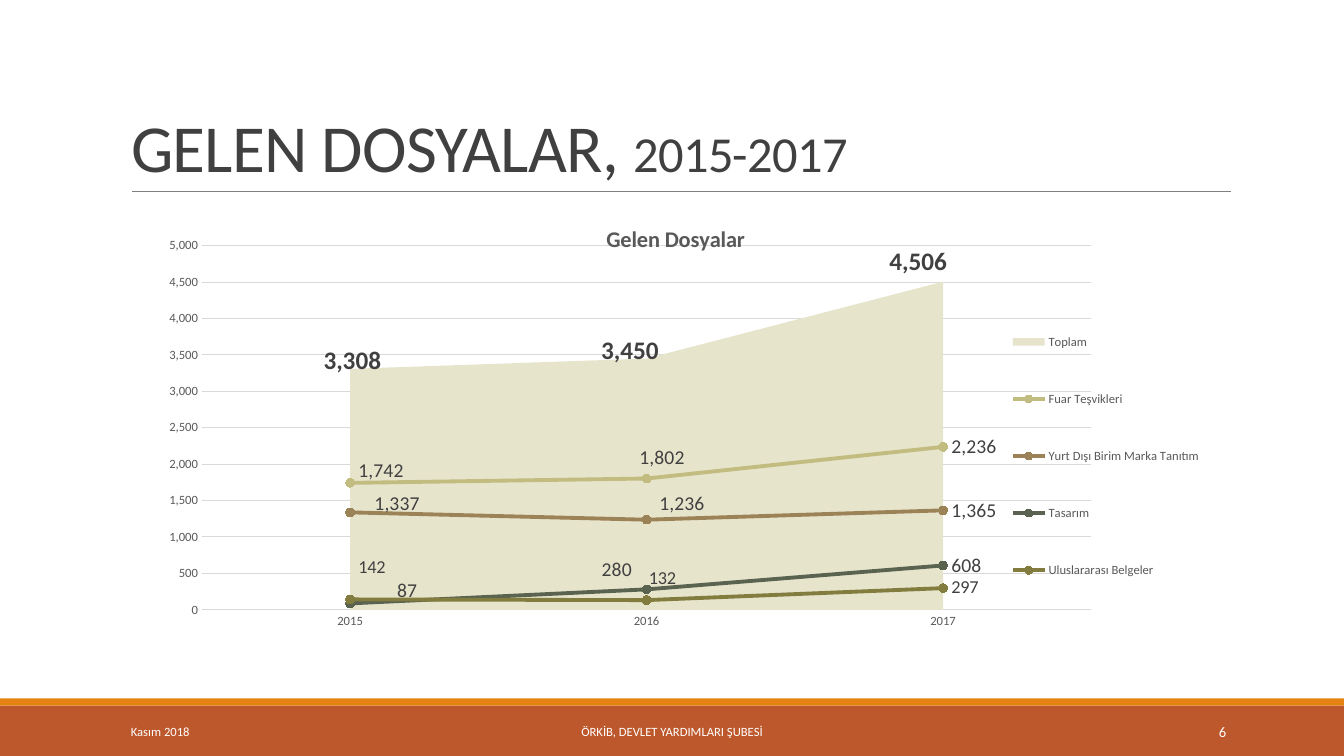
"""Build the slide on incoming files, 2015-2017, with a combined area and line chart."""
from lxml import etree
from pptx import Presentation
from pptx import util as u
from pptx.chart.data import CategoryChartData
from pptx.dml.color import RGBColor
from pptx.enum import chart as ch, shapes, text
from pptx.oxml import parse_xml
from pptx.oxml.ns import nsdecls, qn

W, H = 13.33, 7.5
LEFT, WIDTH = 1.2, 11
FONT, DARK, GREY, PALE, WHITE = "Calibri", "404040", "595959", "D9D9D9", "FFFFFF"
TITLE = [("GELEN DOSYALAR, ", 48), ("2015-2017", 36)]
BARS = [(7, 0.5, "BD582C"), (6.93, 0.07, "E48312")]
FOOTERS = [
    ("Kasım 2018", 1.2, 2.7, 9, text.PP_ALIGN.LEFT),
    ("ÖRKİB, DEVLET YARDIMLARI ŞUBESİ", 4.03, 5.27, 9, text.PP_ALIGN.CENTER),
    ("6", 10.83, 1.43, 10.5, text.PP_ALIGN.RIGHT),
]
YEARS = ["2015", "2016", "2017"]
# name, values, colour, marker colour, label size, label shifts as percent of chart
SERIES = [
    ("Toplam", (3308, 3450, 4506), "E7E4CC", None, 18, [(0.2, -28.7), (-1.5, -29.8), (-2.25, -41)]),
    ("Fuar Teşvikleri", (1742, 1802, 2236), "C2BC80", "C5BF7D", 14, [(0, -2.7), (-1.4, -4.7)]),
    ("Yurt Dışı Birim Marka Tanıtım", (1337, 1236, 1365), "9B8357", "9E8454", 14,
     [(1.45, -1.9), (0.4, -3.6)]),
    ("Tasarım", (87, 280, 608), "59634F", "59644E", 14, [(3.5, -2.9), (-4.8, -4.4)]),
    ("Uluslararası Belgeler", (142, 132, 297), "837C3F", "867F3B", 13, [(0, -7.1), (-0.55, -4.7)]),
]


def rgb(value):
    """Turn a hex string into a colour."""
    return RGBColor.from_string(value)


def style(font, size, color, bold=False):
    """Set the face, size, colour and weight of a font."""
    font.name, font.size, font.bold = FONT, u.Pt(size), bold
    font.color.rgb = rgb(color)


def layout(x, y, w=None, h=None, inner=False, edge=True):
    """Make a manual chart layout from shares of the chart's size."""
    parts = [("layoutTarget", "inner")] if inner else []
    parts += [("xMode", "edge"), ("yMode", "edge")] if edge else []
    parts += [("x", x), ("y", y)]
    parts += [("w", w), ("h", h)] if w else []
    body = "".join(f'<c:{tag} val="{val}"/>' for tag, val in parts)
    return parse_xml(f"<c:layout {nsdecls('c')}><c:manualLayout>{body}</c:manualLayout></c:layout>")


def place(parent, after, element):
    """Put a layout after a named child in place of any earlier layout."""
    for old in parent.findall(qn("c:layout")):
        parent.remove(old)
    if after is None:
        parent.insert(0, element)
    else:
        parent.find(qn(after)).addnext(element)


def add_frame(s):
    """Draw the bottom bars, the title rule and the footer texts."""
    for top, height, color in BARS:
        sp = s.shapes.add_shape(shapes.MSO_SHAPE.RECTANGLE, 0, u.Inches(top), u.Inches(W), u.Inches(height))
        sp.shadow.inherit = False
        sp.fill.solid()
        sp.fill.fore_color.rgb = rgb(color)
        sp.line.fill.background()
    rule = s.shapes.add_connector(shapes.MSO_CONNECTOR.STRAIGHT, u.Inches(1.31), u.Inches(1.9),
                                  u.Inches(12.21), u.Inches(1.9))
    rule.line.color.rgb, rule.line.width = rgb("808080"), u.Pt(0.5)
    etree.SubElement(rule._element.spPr, qn("a:effectLst"))
    for words, left, width, size, align in FOOTERS:
        tf = s.shapes.add_textbox(u.Inches(left), u.Inches(7.06), u.Inches(width), u.Inches(0.4)).text_frame
        tf.word_wrap, tf.vertical_anchor = True, text.MSO_ANCHOR.MIDDLE
        p = tf.paragraphs[0]
        p.text, p.alignment = words, align
        style(p.runs[0].font, size, WHITE)


def add_title(s):
    """Place and format the title."""
    sp = s.shapes.title
    sp.left, sp.top, sp.width, sp.height = (u.Inches(v) for v in (LEFT, 0.31, WIDTH, 1.59))
    tf = sp.text_frame
    tf.word_wrap, tf.auto_size = True, text.MSO_AUTO_SIZE.NONE
    tf.vertical_anchor = text.MSO_ANCHOR.BOTTOM
    p = tf.paragraphs[0]
    p.alignment, p.line_spacing = text.PP_ALIGN.LEFT, 0.85
    for words, size in TITLE:
        r = p.add_run()
        r.text = words
        style(r.font, size, DARK)
        r.font._element.set("spc", "-50")


def format_series(ser, color, marker, size, shifts):
    """Colour one series and place its value labels."""
    area = marker is None
    if area:
        ser.format.fill.solid()
        ser.format.fill.fore_color.rgb = rgb(color)
    else:
        ser.smooth = False
        ser.format.line.color.rgb, ser.format.line.width = rgb(color), u.Pt(2.75)
        ser.marker.style, ser.marker.size = ch.XL_MARKER_STYLE.CIRCLE, 6
        ser.marker.format.fill.solid()
        ser.marker.format.fill.fore_color.rgb = rgb(marker)
        ser.marker.format.line.color.rgb = rgb(marker)
    labels = ser.data_labels
    labels.show_value = True
    labels.number_format, labels.number_format_is_linked = "#,##0", False
    style(labels.font, size, DARK, area)
    if not area:
        labels.position = ch.XL_LABEL_POSITION.RIGHT
    for i, (dx, dy) in enumerate(shifts):
        label = ser.points[i].data_label
        style(label.font, size, DARK, area)
        if not area:
            label.position = ch.XL_LABEL_POSITION.RIGHT
        dlbl = ser._element.xpath(f"c:dLbls/c:dLbl[c:idx/@val='{i}']")[0]
        place(dlbl, "c:idx", layout(round(dx / 100, 4), round(dy / 100, 4), edge=False))
    for leader in ser._element.xpath("c:dLbls/c:showLeaderLines"):
        leader.set("val", "0")


def split_area(chart):
    """Move the first series into an area plot on the same axes."""
    line = chart.plots[0]._element
    total = line.find(qn("c:ser"))
    for tag in ("c:marker", "c:smooth"):
        for child in total.findall(qn(tag)):
            total.remove(child)
    area = parse_xml(f'<c:areaChart {nsdecls("c")}><c:grouping val="stacked"/>'
                     '<c:varyColors val="0"/></c:areaChart>')
    area.append(total)
    for axis in line.findall(qn("c:axId")):
        etree.SubElement(area, qn("c:axId")).set("val", axis.get("val"))
    line.addprevious(area)


def add_chart(s):
    """Add the chart of incoming files."""
    data = CategoryChartData(number_format="#,##0")
    data.categories = YEARS
    for name, values, *_ in SERIES:
        data.add_series(name, values)
    chart = s.shapes.add_chart(ch.XL_CHART_TYPE.LINE_MARKERS, u.Inches(LEFT), u.Inches(2.05),
                               u.Inches(WIDTH), u.Inches(4.46), data).chart
    style(chart.font, 10, "000000")
    chart.plots[0].vary_by_categories = False
    chart.has_title = True
    tf = chart.chart_title.text_frame
    tf.text = "Gelen Dosyalar"
    style(tf.paragraphs[0].runs[0].font, 16, GREY, True)
    place(chart.chart_title._element, "c:tx", layout(0.434, 0.03))
    chart.chart_title.include_in_layout = True

    chart.has_legend = True
    chart.legend.position = ch.XL_LEGEND_POSITION.RIGHT
    chart.legend.include_in_layout = True
    style(chart.legend.font, 9, GREY)
    place(chart.legend._element, "c:legendPos", layout(0.798, 0.19, 0.18, 0.73))

    cat, val = chart.category_axis, chart.value_axis
    for axis in (cat, val):
        axis.major_tick_mark = axis.minor_tick_mark = ch.XL_TICK_MARK.NONE
        style(axis.tick_labels.font, 9, GREY)
    cat.format.line.color.rgb, cat.format.line.width = rgb(PALE), u.Pt(1)
    val.minimum_scale, val.maximum_scale, val.major_unit = 0, 5000, 500
    val.tick_labels.number_format, val.tick_labels.number_format_is_linked = "#,##0", False
    val.format.line.fill.background()
    grid = val.major_gridlines.format.line
    grid.color.rgb, grid.width = rgb(PALE), u.Pt(0.75)
    for old in val._element.findall(qn("c:crossBetween")):
        val._element.remove(old)
    val._element.find(qn("c:crosses")).addnext(parse_xml(f'<c:crossBetween {nsdecls("c")} val="between"/>'))

    for ser, (_, _, *look) in zip(chart.plots[0].series, SERIES):
        format_series(ser, *look)
    place(chart._chartSpace.chart.plotArea, None, layout(0.073, 0.087, 0.802, 0.81, inner=True))
    split_area(chart)


def main():
    """Build and save the presentation."""
    prs = Presentation()
    prs.slide_width, prs.slide_height = u.Inches(W), u.Inches(H)
    s = prs.slides.add_slide(prs.slide_layouts[5])
    add_frame(s)
    add_title(s)
    add_chart(s)
    prs.save("out.pptx")


if __name__ == "__main__":
    main()
